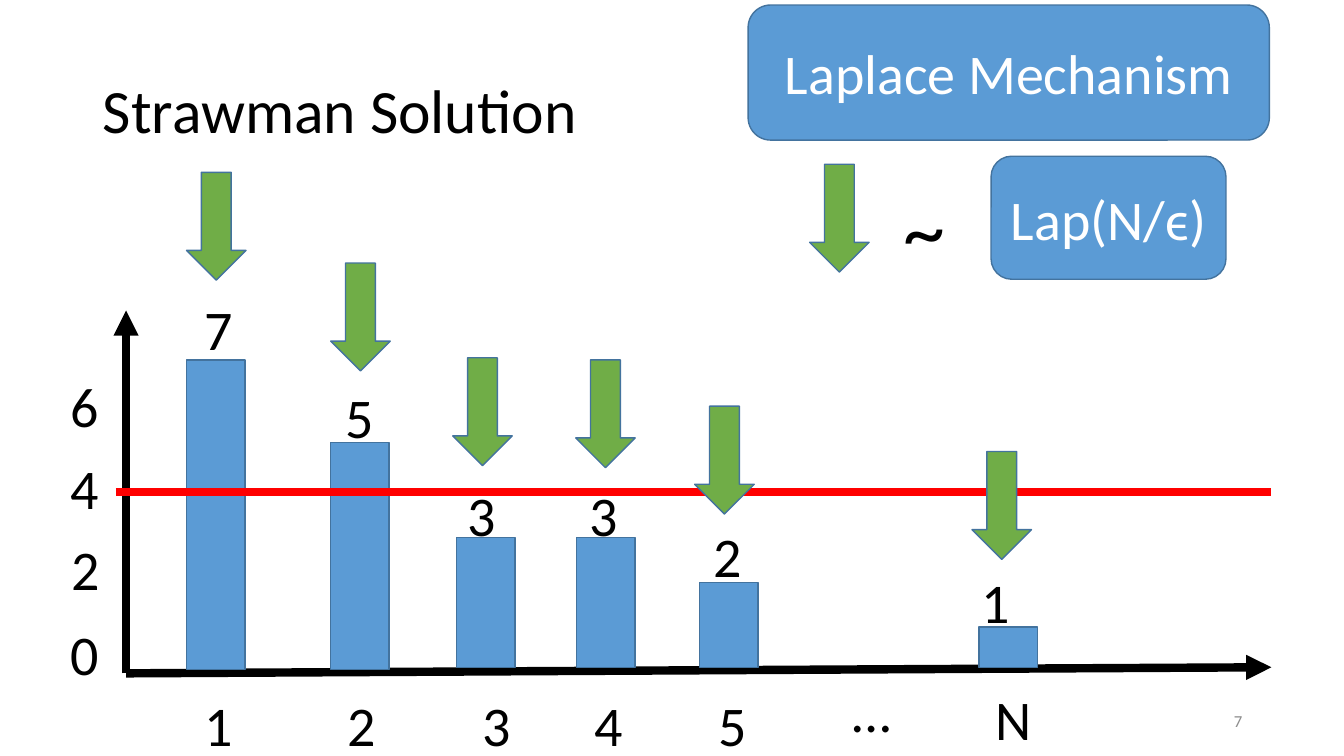
"""Build the Strawman Solution slide: a noisy histogram under the Laplace mechanism."""
from dataclasses import dataclass

from lxml.etree import SubElement
from pptx import Presentation
from pptx.dml.color import RGBColor
from pptx.enum.shapes import MSO_CONNECTOR as Link, MSO_SHAPE as Preset
from pptx.enum.text import MSO_ANCHOR as Anchor, PP_ALIGN as Align
from pptx.oxml.ns import qn
from pptx.util import Inches, Pt

TITLE = "Strawman Solution"
MECHANISM = "Laplace Mechanism"
NOISE = "Lap(N/ϵ)"
PAGE = "7"

# Positions below are grid units: 100 columns or rows to the inch.
BARS = [
    dict(value="7", x=185, top=357, base=664, label=(193, 287), arrow=(185, 171)),
    dict(value="5", x=328, top=439, base=664, label=(333, 375), arrow=(328, 261)),
    dict(value="3", x=453, top=533, base=662, label=(454, 472), arrow=(449, 355)),
    dict(value="3", x=572, top=533, base=662, label=(575, 472), arrow=(571, 357)),
    dict(value="2", x=694, top=578, base=662, label=(698, 512), arrow=(689, 403)),
    dict(value="1", x=971, top=622, base=662, label=(964, 558), arrow=(964, 448)),
]
CATEGORIES = [("1", 193, 680), ("2", 335, 680), ("3", 469, 680), ("4", 580, 680),
              ("5", 703, 680), ("…", 836, 666), ("N", 978, 674)]
TICKS = [("0", 60, 610), ("2", 61, 525), ("4", 60, 445), ("6", 60, 364)]
ORIGIN = (125, 668)
X_END, Y_END = (1261, 662), (125, 308)
THRESHOLD = ((115, 488), (1261, 488))
BAR_WIDTH = 58
ARROW_SIZE = (59, 107)
LABEL_SIZE = (71, 77)
TICK_SIZE = (95, 77)


@dataclass(frozen=True)
class Theme:
    font: str = "Calibri"
    ink: str = "000000"
    light: str = "FFFFFF"
    muted: str = "8C8C8C"
    bar: str = "5B9BD5"
    outline: str = "43739E"
    noise: str = "70AD47"
    threshold: str = "FF0000"
    title_size: int = 44
    body_size: int = 40
    tilde_size: int = 60
    page_size: int = 12
    axis_width: int = 6


THEME = Theme()


def units(*lengths):
    return [Inches(length / 100) for length in lengths]


def write(holder, text, size=THEME.body_size, color=THEME.ink, align=Align.LEFT,
          anchor=Anchor.TOP, spacing=1.0):
    frame = holder.text_frame
    frame.word_wrap = True
    frame.vertical_anchor = anchor
    frame.text = text
    paragraph = frame.paragraphs[0]
    paragraph.alignment = align
    paragraph.line_spacing = spacing
    font = paragraph.runs[0].font
    font.name = THEME.font
    font.size = Pt(size)
    font.color.rgb = RGBColor.from_string(color)


def add_label(slide, text, place, extent, **style):
    write(slide.shapes.add_textbox(*units(*place, *extent)), text, **style)


def add_block(slide, preset, place, extent, fill=THEME.bar, text=None):
    block = slide.shapes.add_shape(preset, *units(*place, *extent))
    block.shadow.inherit = False
    block.fill.solid()
    block.fill.fore_color.rgb = RGBColor.from_string(fill)
    block.line.color.rgb = RGBColor.from_string(THEME.outline)
    block.line.width = Pt(1)
    if text:
        write(block, text, color=THEME.light, align=Align.CENTER, anchor=Anchor.MIDDLE)


def add_rule(slide, start, end, color=THEME.ink, arrow=False):
    rule = slide.shapes.add_connector(Link.STRAIGHT, *units(*start, *end))
    rule.line.color.rgb = RGBColor.from_string(color)
    rule.line.width = Pt(THEME.axis_width)
    if arrow:
        SubElement(rule.line._get_or_add_ln(), qn("a:tailEnd"), type="triangle")
    SubElement(rule._element.spPr, qn("a:effectLst"))


def add_header(slide):
    title = slide.shapes.title
    title.left, title.top, title.width, title.height = units(92, 40, 1150, 145)
    write(title, TITLE, size=THEME.title_size, anchor=Anchor.MIDDLE, spacing=0.9)
    add_block(slide, Preset.ROUNDED_RECTANGLE, (742, 5), (517, 134), text=MECHANISM)
    add_block(slide, Preset.ROUNDED_RECTANGLE, (983, 155), (233, 122), text=NOISE)
    add_block(slide, Preset.DOWN_ARROW, (803, 163), ARROW_SIZE, fill=THEME.noise)
    add_label(slide, "~", (886, 170), (68, 111), size=THEME.tilde_size)


def add_histogram(slide):
    for end in (X_END, Y_END):
        add_rule(slide, ORIGIN, end, arrow=True)
    for bar in BARS:
        add_block(slide, Preset.RECTANGLE, (bar["x"], bar["top"]),
                  (BAR_WIDTH, bar["base"] - bar["top"]))
        add_label(slide, bar["value"], bar["label"], LABEL_SIZE)
    add_rule(slide, *THRESHOLD, color=THEME.threshold)
    for bar in BARS:
        add_block(slide, Preset.DOWN_ARROW, bar["arrow"], ARROW_SIZE, fill=THEME.noise)
    for marks, extent in ((CATEGORIES, LABEL_SIZE), (TICKS, TICK_SIZE)):
        for text, *place in marks:
            add_label(slide, text, place, extent)


def main():
    deck = Presentation()
    deck.slide_width, deck.slide_height = Inches(13.33), Inches(7.5)
    slide = deck.slides.add_slide(deck.slide_layouts[5])
    add_header(slide)
    add_histogram(slide)
    add_label(slide, PAGE, (942, 695), (300, 40), size=THEME.page_size,
              color=THEME.muted, align=Align.RIGHT, anchor=Anchor.MIDDLE)
    deck.save("out.pptx")


if __name__ == "__main__":
    main()
